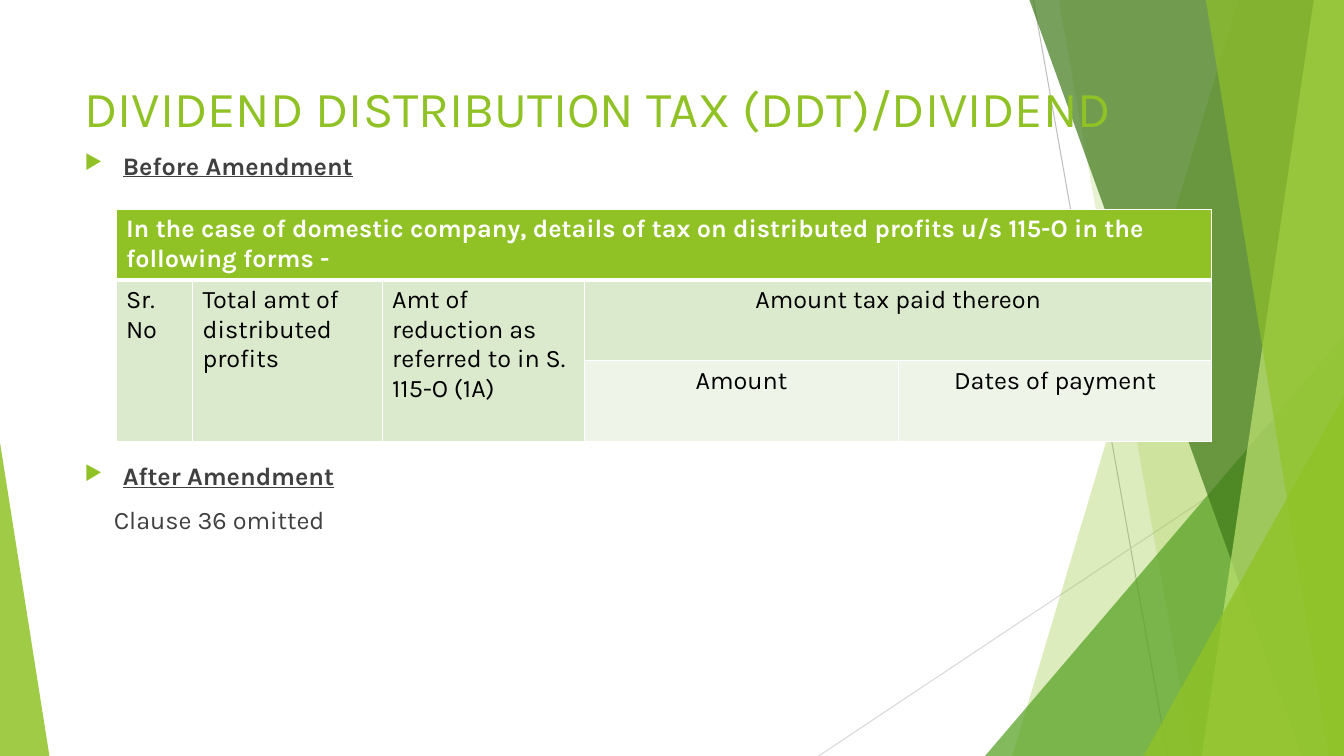
import pptx
import pptx.util
import pptx.dml.color
import pptx.enum.shapes
import pptx.enum.text
import pptx.oxml
import pptx.oxml.ns

Inches, Pt = pptx.util.Inches, pptx.util.Pt
qn = pptx.oxml.ns.qn
ALIGN = pptx.enum.text.PP_ALIGN
FONT = "Karla"
WIDTH, HEIGHT = 13.33, 7.5
COLORS = {
    "lime": "90C226", "pale lime": "C0E474", "green": "54A021", "forest": "3F7819",
    "text": "404040", "black": "000000", "white": "FFFFFF",
    "band": "DBE9CD", "light band": "EEF4E8",
    "grey": "BFBFBF", "light grey": "D9D9D9",
}


def rgb(color):
    return pptx.dml.color.RGBColor.from_string(COLORS[color])


def add_xml(parent, tag, **attributes):
    child = parent.makeelement(qn(tag), attributes)
    parent.append(child)
    return child


def add_ray(slide, start, end, color):
    """Draw a thin background line."""
    ray = slide.shapes.add_connector(
        pptx.enum.shapes.MSO_CONNECTOR.STRAIGHT, *map(Inches, start + end))
    ray.line.color.rgb = rgb(color)
    ray.line.width = Pt(0.75)
    add_xml(ray._element.spPr, "a:effectLst")


def paint(facet, color, opacity):
    facet.shadow.inherit = False
    facet.line.fill.background()
    facet.fill.solid()
    facet.fill.fore_color.rgb = rgb(color)
    tint = facet._element.spPr.find(".//" + qn("a:srgbClr"))
    add_xml(tint, "a:alpha", val=str(opacity * 1000))


def add_facet(slide, top_left, bottom_left, color, opacity):
    """Fill from a slanted left edge to the right edge of the slide."""
    corners = [(top_left, 0), (WIDTH, 0), (WIDTH, HEIGHT), (bottom_left, HEIGHT)]
    start, *others = [(Inches(x), Inches(y)) for x, y in corners]
    outline = slide.shapes.build_freeform(*start)
    outline.add_line_segments(others, close=True)
    paint(outline.convert_to_shape(), color, opacity)


def add_peak(slide, left, top, width, tip, color, opacity):
    """Stand a triangle on the bottom edge, its tip at a share of its width."""
    peak = slide.shapes.add_shape(
        pptx.enum.shapes.MSO_SHAPE.ISOSCELES_TRIANGLE,
        Inches(left), Inches(top), Inches(width), Inches(HEIGHT - top))
    peak.adjustments[0] = tip
    paint(peak, color, opacity)


def write(paragraph, text, color, size=18, **formats):
    run = paragraph.add_run()
    run.text = text
    run.font.color.rgb = rgb(color)
    for name, value in {"name": FONT, "size": Pt(size), **formats}.items():
        setattr(run.font, name, value)


def add_text_frame(slide, left, top, width, height, anchor):
    box = slide.shapes.add_textbox(*map(Inches, (left, top, width, height)))
    box.text_frame.word_wrap = True
    box.text_frame.vertical_anchor = anchor
    return box.text_frame


def indent(paragraph, margin, first_line=0.0):
    properties = paragraph._p.get_or_add_pPr()
    properties.set("marL", str(Inches(margin)))
    properties.set("indent", str(Inches(first_line)))
    return properties


def write_heading(paragraph, text, space_before):
    paragraph.space_before = Pt(space_before)
    properties = indent(paragraph, 0.38, -0.38)
    add_xml(add_xml(properties, "a:buClr"), "a:srgbClr", val=COLORS["lime"])
    add_xml(properties, "a:buSzPct", val="80000")
    add_xml(properties, "a:buChar", char="▶")
    write(paragraph, text, "text", bold=True, underline=True)


def style_cell(cell, fill, bottom_width):
    properties = cell._tc.get_or_add_tcPr()
    for side, width in {"L": 1, "R": 1, "T": 1, "B": bottom_width}.items():
        border = add_xml(properties, "a:ln" + side, w=str(Pt(width)))
        add_xml(add_xml(border, "a:solidFill"), "a:srgbClr", val=COLORS["white"])
    cell.fill.solid()
    cell.fill.fore_color.rgb = rgb(fill)


def add_tax_table(slide):
    columns, rows = [0.76, 1.88, 2.01, 3.11, 3.11], [0.7, 0.8, 0.8]
    table = slide.shapes.add_table(
        len(rows), len(columns), Inches(1.15), Inches(2.08),
        Inches(sum(columns)), Inches(sum(rows))).table
    for column, width in zip(table.columns, columns):
        column.width = Inches(width)
    for row, height in zip(table.rows, rows):
        row.height = Inches(height)

    for r in range(len(rows)):
        for c in range(len(columns)):
            fill = "lime" if r == 0 else "light band" if r == 2 and c > 2 else "band"
            style_cell(table.cell(r, c), fill, 3 if r == 0 else 1)

    # row, column, last row, last column, text
    entries = [
        (0, 0, 0, 4, "In the case of domestic company, details of tax on "
                     "distributed profits u/s 115-O in the following forms -"),
        (1, 0, 2, 0, "Sr. No"),
        (1, 1, 2, 1, "Total amt of distributed profits"),
        (1, 2, 2, 2, "Amt of reduction as referred to in S. 115-O (1A)"),
        (1, 3, 1, 4, "Amount tax paid thereon"),
        (2, 3, 2, 3, "Amount"),
        (2, 4, 2, 4, "Dates of payment"),
    ]
    for r, c, last_row, last_column, text in entries:
        cell = table.cell(r, c)
        if (r, c) != (last_row, last_column):
            cell.merge(table.cell(last_row, last_column))
        paragraph = cell.text_frame.paragraphs[0]
        paragraph.alignment = ALIGN.CENTER if c > 2 else ALIGN.LEFT
        write(paragraph, text, "black" if r else "white", bold=r == 0)


def add_background(slide):
    add_ray(slide, (10.25, 0), (11.58, HEIGHT), "grey")
    add_ray(slide, (WIDTH, 4.03), (8.12, HEIGHT), "light grey")
    add_facet(slide, 12.28, 10.04, "lime", 30)
    add_facet(slide, 10.5, 11.83, "lime", 20)
    add_peak(slide, 9.77, 3.33, 3.56, 1, "green", 72)
    add_facet(slide, 10.21, 12.91, "forest", 70)
    add_facet(slide, 13.03, 11.92, "pale lime", 70)
    add_facet(slide, 11.96, 13.18, "lime", 65)
    add_peak(slide, 11.34, 3.93, 1.99, 1, "lime", 80)
    add_peak(slide, 0, 4.39, 0.49, 0, "lime", 85)


def add_amendments(slide):
    body = add_text_frame(slide, 0.74, 1.44, 9.4, 5.16, pptx.enum.text.MSO_ANCHOR.TOP)
    write_heading(body.paragraphs[0], "Before Amendment", 10)
    # The large gap leaves room for the table
    write_heading(body.add_paragraph(), "After Amendment", 200)
    clause = body.add_paragraph()
    clause.space_before = Pt(10)
    indent(clause, 0.29)
    write(clause, "Clause 36 omitted", "text")


def main():
    deck = pptx.Presentation()
    deck.slide_width, deck.slide_height = Inches(WIDTH), Inches(HEIGHT)
    slide = deck.slides.add_slide(deck.slide_layouts[6])
    add_background(slide)
    title = add_text_frame(slide, 0.74, 0.67, 11.64, 0.78, pptx.enum.text.MSO_ANCHOR.MIDDLE)
    write(title.paragraphs[0], "DIVIDEND DISTRIBUTION TAX (DDT)/DIVIDEND", "lime", 36)
    add_amendments(slide)
    add_tax_table(slide)
    deck.save("out.pptx")


if __name__ == "__main__":
    main()
